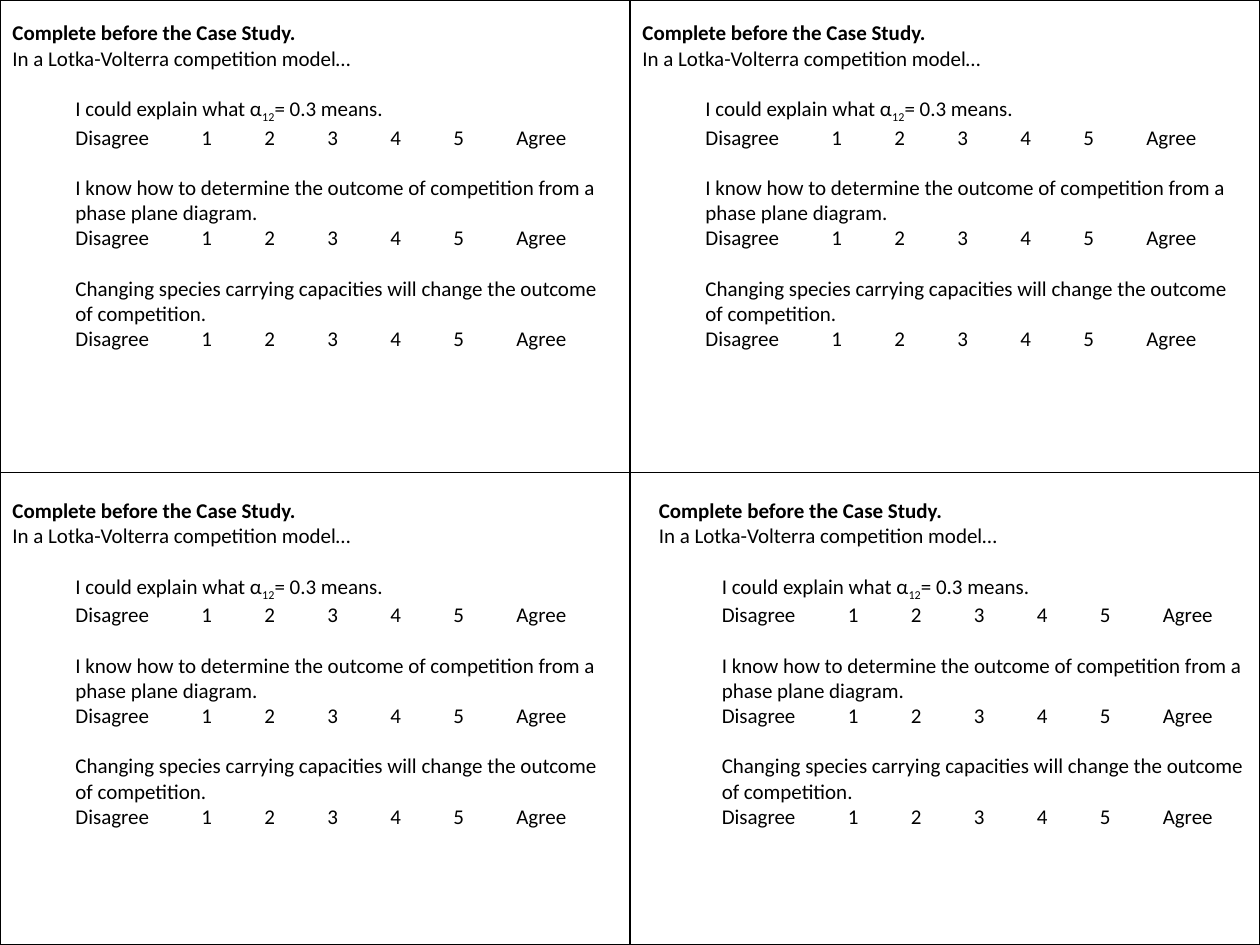
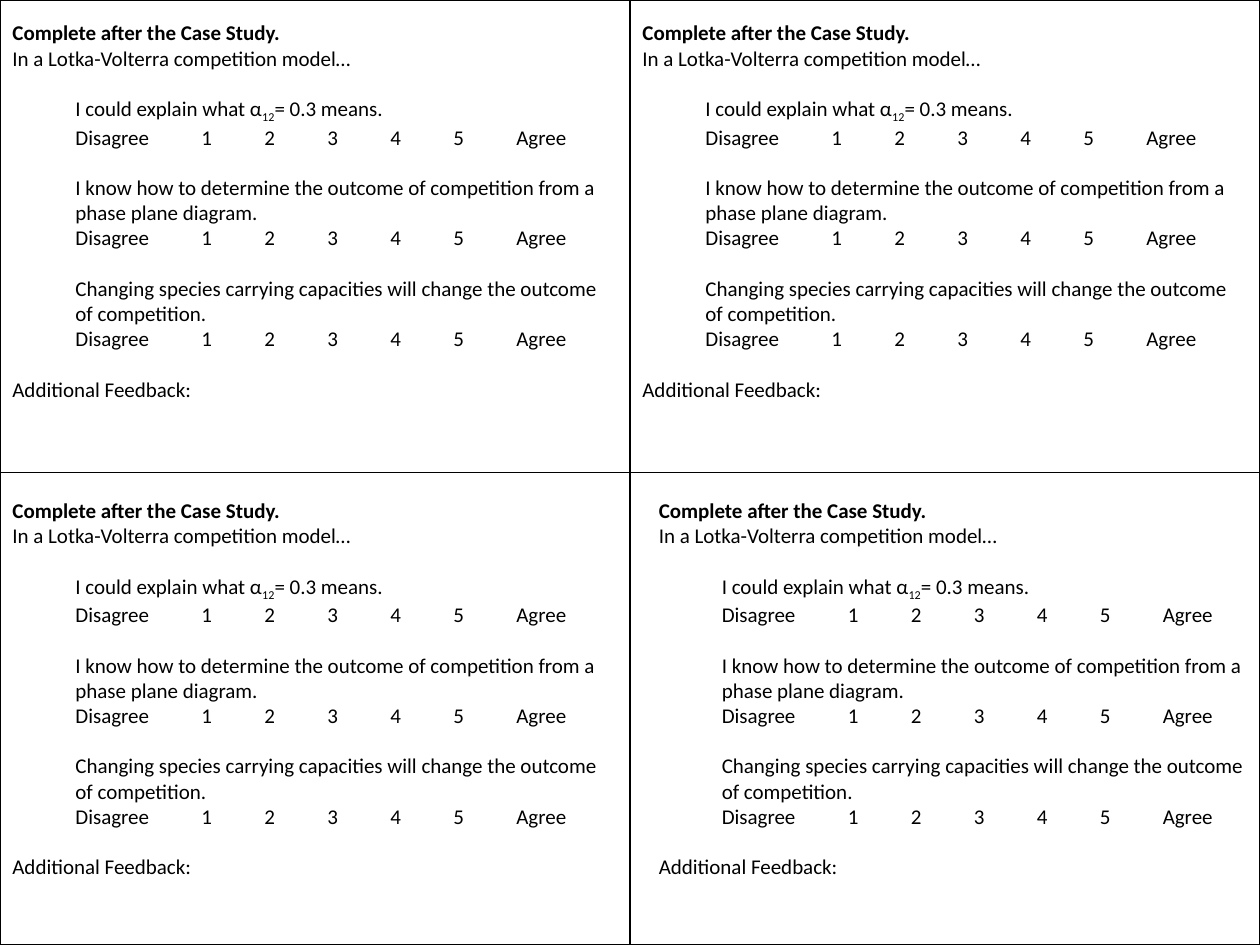
from lxml.etree import SubElement
from pptx import Presentation
from pptx.dml.color import RGBColor
from pptx.enum.text import MSO_AUTO_SIZE
from pptx.oxml.ns import qn
from pptx.util import Pt

PX = 9144  # EMU per px, 100 px to the inch
BLACK = RGBColor(0, 0, 0)
FONT = "Calibri"
SIZE = Pt(12)
GAP = Pt(14.4)
INDENT = 50 * PX

SCALE = "Disagree\t1\t2\t3\t4\t5\tAgree"
ITEMS = [
    ["I could explain what α", "12", "= 0.3 means."],
    ["I know how to determine the outcome of competition from a phase plane diagram."],
    ["Changing species carrying capacities will change the outcome of competition."],
]
SPOTS = [(0, 11), (500, 11), (0, 390), (513, 390)]
# Stage, heights of the four forms, closing line
SHEETS = [
    ("before", [313, 313, 333, 333], None),
    ("after", [353] * 4, "Additional Feedback:"),
]


def add_line(frame, parts, indent=0, gap=0, bold=False):
    """Add a paragraph; the second of several parts is a subscript."""
    line = frame.paragraphs[0]
    if line.runs:
        line = frame.add_paragraph()
    line.space_before = gap
    line.font.name, line.font.size = FONT, SIZE
    line.font.bold = bold
    line.font.color.rgb = BLACK
    props = line._p.get_or_add_pPr()
    props.set("marL", str(indent))
    props.set("indent", "0")
    props.set("defTabSz", str(INDENT))
    for spot, part in enumerate(parts):
        run = line.add_run()
        run.text = part
        if spot == 1:
            run.font._element.set("baseline", "-25000")


def add_border(cell):
    props = cell._tc.get_or_add_tcPr()
    for spot, side in enumerate(("lnL", "lnR", "lnT", "lnB")):
        edge = props.makeelement(qn("a:" + side), {"w": str(Pt(1))})
        fill = SubElement(edge, qn("a:solidFill"))
        SubElement(fill, qn("a:srgbClr"), val=str(BLACK))
        props.insert(spot, edge)


deck = Presentation()
deck.slide_width, deck.slide_height = 1000 * PX, 750 * PX

for stage, heights, closing in SHEETS:
    slide = deck.slides.add_slide(deck.slide_layouts[6])

    grid = slide.shapes.add_table(2, 2, 0, 0, 1000 * PX, 750 * PX).table
    grid.first_row = grid.horz_banding = False
    for cell in grid.iter_cells():
        cell.fill.background()
        add_border(cell)

    for (left, top), height in zip(SPOTS, heights):
        form = slide.shapes.add_textbox(left * PX, top * PX, 488 * PX, height * PX)
        frame = form.text_frame
        frame.word_wrap = True
        frame.auto_size = MSO_AUTO_SIZE.SHAPE_TO_FIT_TEXT
        add_line(frame, [f"Complete {stage} the Case Study."], bold=True)
        add_line(frame, ["In a Lotka-Volterra competition model…"])
        for item in ITEMS:
            add_line(frame, item, INDENT, GAP)
            add_line(frame, [SCALE], INDENT)
        if closing:
            add_line(frame, [closing], gap=GAP)

deck.save("out.pptx")
